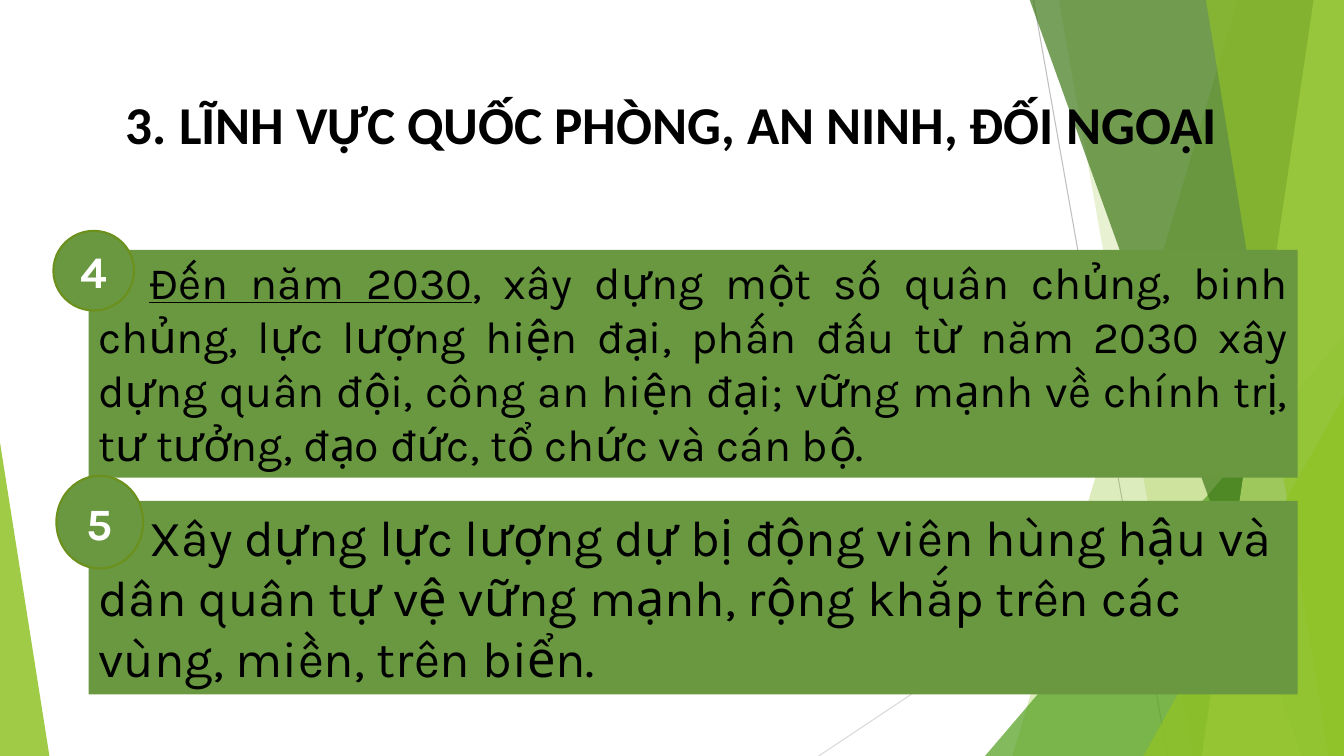
import pptx
import pptx.util
import pptx.dml.color
import pptx.enum.shapes
import pptx.enum.text
import pptx.oxml
import pptx.oxml.ns

Inches = pptx.util.Inches
Pt = pptx.util.Pt
KIND = pptx.enum.shapes.MSO_SHAPE
ALIGN = pptx.enum.text.PP_ALIGN
ANCHOR = pptx.enum.text.MSO_ANCHOR
FIT = pptx.enum.text.MSO_AUTO_SIZE
WIDTH, HEIGHT = 13.33, 7.5
GREEN, LIME = "699841", "90C226"


def color(code):
    return pptx.dml.color.RGBColor.from_string(code)


def paint(shape, code, alpha=100):
    """Flat fill with optional opacity in percent, no line or shadow."""
    shape.shadow.inherit = False
    shape.line.fill.background()
    shape.fill.solid()
    shape.fill.fore_color.rgb = color(code)
    if alpha < 100:
        tag = shape.fill._xPr.find(".//" + pptx.oxml.ns.qn("a:srgbClr"))
        tag.append(pptx.oxml.parse_xml(
            f'<a:alpha {pptx.oxml.ns.nsdecls("a")} val="{alpha * 1000}"/>'))


def style(run, size, code, face="Karla", bold=False):
    run.font.size = Pt(size)
    run.font.name = face
    run.font.bold = bold
    run.font.color.rgb = color(code)


def add(slide, kind, box):
    return slide.shapes.add_shape(kind, *map(Inches, box))


def line(slide, start, end, code):
    link = slide.shapes.add_connector(
        pptx.enum.shapes.MSO_CONNECTOR.STRAIGHT, *map(Inches, start + end))
    link.line.color.rgb = color(code)
    link.line.width = Pt(0.75)
    link._element.spPr.append(pptx.oxml.parse_xml(
        f'<a:effectLst {pptx.oxml.ns.nsdecls("a")}/>'))


def band(slide, top, foot, code, alpha):
    """Slanted band from its left edge to the right side of the slide."""
    head = -0.01
    pen = slide.shapes.build_freeform(Inches(top), Inches(head))
    spots = [(WIDTH, head), (WIDTH, HEIGHT), (foot, HEIGHT)]
    pen.add_line_segments([(Inches(x), Inches(y)) for x, y in spots])
    paint(pen.convert_to_shape(), code, alpha)


def wedge(slide, left, top, width, apex, code, alpha):
    """Triangle that stands on the bottom of the slide."""
    shape = add(slide, KIND.ISOSCELES_TRIANGLE,
                (left, top, width, HEIGHT - top))
    shape.adjustments[0] = apex
    paint(shape, code, alpha)


def backdrop(slide):
    line(slide, (10.25, 0), (11.58, HEIGHT), "BFBFBF")
    line(slide, (WIDTH, 4.03), (8.12, HEIGHT), "D9D9D9")
    band(slide, 12.28, 10.04, LIME, 30)
    band(slide, 10.5, 11.83, LIME, 20)
    wedge(slide, 9.77, 3.33, 3.56, 1, "54A021", 72)
    band(slide, 10.21, 12.91, "3F7819", 70)
    band(slide, 13.03, 11.92, "C0E474", 70)
    band(slide, 11.96, 13.18, LIME, 65)
    wedge(slide, 11.34, 3.93, 1.99, 1, LIME, 80)
    wedge(slide, 0, 4.39, 0.49, 0, LIME, 85)


def title(slide, box, text):
    frame = slide.shapes.add_textbox(*map(Inches, box)).text_frame
    frame.word_wrap = True
    frame.vertical_anchor = ANCHOR.MIDDLE
    para = frame.paragraphs[0]
    para.text = text
    para.alignment = ALIGN.CENTER
    style(para.runs[0], 38, "000000", "Calibri", True)


def panel(slide, box, lead, rest, size, align):
    """Green text panel; the lead words are underlined."""
    shape = add(slide, KIND.RECTANGLE, box)
    paint(shape, GREEN)
    frame = shape.text_frame
    frame.word_wrap = True
    frame.auto_size = FIT.SHAPE_TO_FIT_TEXT
    frame.vertical_anchor = ANCHOR.TOP
    para = frame.paragraphs[0]
    para.alignment = align
    para._p.get_or_add_pPr().set("indent", str(Inches(0.5)))
    for text, under in ((lead, True), (rest, False)):
        if text:
            run = para.add_run()
            run.text = text
            style(run, size, "000000")
            run.font.underline = under


def badge(slide, box, text):
    """Numbered circle on the corner of a panel."""
    shape = add(slide, KIND.OVAL, box)
    paint(shape, GREEN)
    shape.line.color.rgb = color("6B901C")
    shape.line.width = Pt(1.5)
    frame = shape.text_frame
    frame.vertical_anchor = ANCHOR.MIDDLE
    para = frame.paragraphs[0]
    para.text = text
    para.alignment = ALIGN.CENTER
    style(para.runs[0], 32, "FFFFFF", bold=True)


def main():
    deck = pptx.Presentation()
    deck.slide_width, deck.slide_height = Inches(WIDTH), Inches(HEIGHT)
    slide = deck.slides.add_slide(deck.slide_layouts[6])
    backdrop(slide)

    # Goals four and five
    panel(slide, (0.88, 2.48, 11.99, 2.26), "Đến năm 2030",
          ", xây dựng một số quân chủng, binh chủng, lực lượng hiện đại, "
          "phấn đấu từ năm 2030 xây dựng quân đội, công an hiện đại; vững "
          "mạnh về chính trị, tư tưởng, đạo đức, tổ chức và cán bộ.",
          32, ALIGN.JUSTIFY)
    badge(slide, (0.53, 2.29, 0.8, 0.79), "4")
    panel(slide, (0.88, 4.97, 11.99, 1.92), "",
          "Xây dựng lực lượng dự bị động viên hùng hậu và dân quân tự vệ "
          "vững mạnh, rộng khắp trên các vùng, miền, trên biển.",
          36, ALIGN.LEFT)
    badge(slide, (0.56, 4.72, 0.86, 0.92), "5")

    title(slide, (0.29, 0.42, 12.75, 1.6),
          "3. LĨNH VỰC QUỐC PHÒNG, AN NINH, ĐỐI NGOẠI")
    deck.save("out.pptx")


if __name__ == "__main__":
    main()
